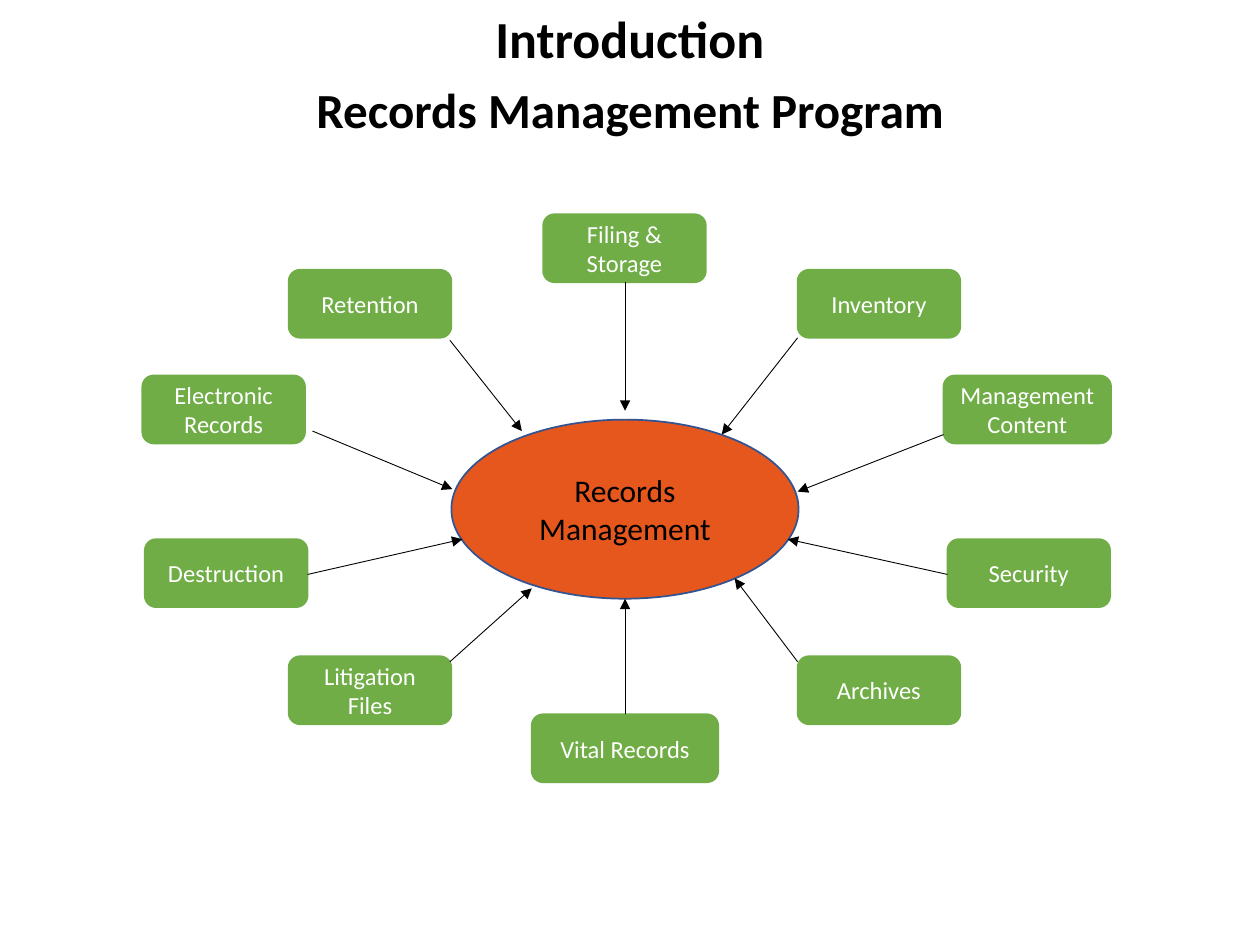
"""Build a slide showing the parts of a records management program around a hub."""
from lxml import etree
from pptx import Presentation
from pptx import util as u
from pptx.dml.color import RGBColor
from pptx.enum import shapes, text
from pptx.oxml.ns import qn

BLACK = RGBColor(0x00, 0x00, 0x00)
WHITE = RGBColor(0xFF, 0xFF, 0xFF)
GREEN = RGBColor(0x70, 0xAD, 0x47)
ORANGE = RGBColor(0xE6, 0x57, 0x1E)
NAVY = RGBColor(0x32, 0x54, 0x91)

CENTER = 12.6
BOX_WIDTH = 3.28
BOX_HEIGHT = 1.37

TOPICS = [
    ("Filing & Storage", 10.95, 4.32, BOX_WIDTH),
    ("Inventory", 16.08, 5.44, BOX_WIDTH),
    ("Management Content", 19.02, 7.57, 3.38),
    ("Security", 19.1, 10.87, BOX_WIDTH),
    ("Archives", 16.08, 13.23, BOX_WIDTH),
    ("Vital Records", 10.72, 14.4, 3.76),
    ("Litigation Files", 5.82, 13.23, BOX_WIDTH),
    ("Destruction", 2.92, 10.87, BOX_WIDTH),
    ("Electronic Records", 2.87, 7.57, BOX_WIDTH),
    ("Retention", 5.82, 5.44, BOX_WIDTH),
]

ARROWS = [
    ((CENTER, 5.69), (CENTER, 8.28)),
    ((16.08, 6.81), (14.55, 8.76)),
    ((19.02, 8.76), (16.08, 9.91)),
    ((19.1, 11.58), (15.88, 10.87)),
    ((16.08, 13.34), (14.81, 11.66)),
    ((CENTER, 14.4), (CENTER, 12.07)),
    ((9.07, 13.34), (10.72, 11.86)),
    ((6.2, 11.58), (9.32, 10.87)),
    ((6.3, 8.69), (9.12, 9.86)),
    ((9.07, 6.86), (10.52, 8.69)),
]


def write_text(shape, words, *, size, color, font, bold=False, spacing=1.0,
               anchor=text.MSO_ANCHOR.MIDDLE):
    """Put one centred paragraph into a shape."""
    frame = shape.text_frame
    frame.word_wrap = True
    frame.vertical_anchor = anchor
    paragraph = frame.paragraphs[0]
    paragraph.alignment = text.PP_ALIGN.CENTER
    paragraph.line_spacing = spacing
    run = paragraph.add_run()
    run.text = words
    run.font.name = font
    run.font.size = u.Pt(size)
    run.font.bold = bold
    run.font.color.rgb = color


class Diagram:
    """Hold the style and the slide being drawn."""

    def __init__(self, slide, font="Calibri"):
        self.slide = slide
        self.font = font

    def heading(self, words, top, height, **style):
        """Add a bold heading across the slide."""
        box = self.slide.shapes.add_textbox(
            u.Cm(1.27), u.Cm(top), u.Cm(22.86), u.Cm(height))
        write_text(box, words, color=BLACK, font=self.font, bold=True, **style)

    def node(self, kind, words, bounds, fill, line, **style):
        """Add a filled shape with a label."""
        shape = self.slide.shapes.add_shape(kind, *map(u.Cm, bounds))
        shape.shadow.inherit = False
        shape.fill.solid()
        shape.fill.fore_color.rgb = fill
        shape.line.color.rgb = line
        shape.line.width = u.Pt(1)
        write_text(shape, words, font=self.font, **style)

    def arrow(self, start, end):
        """Add a thin line with an arrowhead at its end."""
        connector = self.slide.shapes.add_connector(
            shapes.MSO_CONNECTOR.STRAIGHT, *map(u.Cm, start + end))
        connector.line.color.rgb = BLACK
        connector.line.width = u.Pt(0.5)
        properties = connector.line._get_or_add_ln()
        etree.SubElement(properties, qn("a:tailEnd"), type="triangle")
        etree.SubElement(connector._element.spPr, qn("a:effectLst"))


def main():
    """Draw the slide and save it."""
    presentation = Presentation()
    presentation.slide_width = u.Cm(25.4)
    presentation.slide_height = u.Cm(19.05)
    slide = presentation.slides.add_slide(presentation.slide_layouts[6])
    diagram = Diagram(slide)

    diagram.heading("Introduction", 0.43, 0.84, size=29.7, spacing=0.9)
    diagram.heading("Records Management Program", 1.47, 1.45, size=28,
                    anchor=text.MSO_ANCHOR.TOP)
    diagram.node(shapes.MSO_SHAPE.OVAL, "Records Management",
                 (9.1, 8.46, 7, 3.61), ORANGE, NAVY, size=18, color=BLACK)
    for words, left, top, width in TOPICS:
        diagram.node(shapes.MSO_SHAPE.ROUNDED_RECTANGLE, words,
                     (left, top, width, BOX_HEIGHT), GREEN, GREEN,
                     size=14, color=WHITE)
    for start, end in ARROWS:
        diagram.arrow(start, end)

    presentation.save("out.pptx")


if __name__ == "__main__":
    main()
